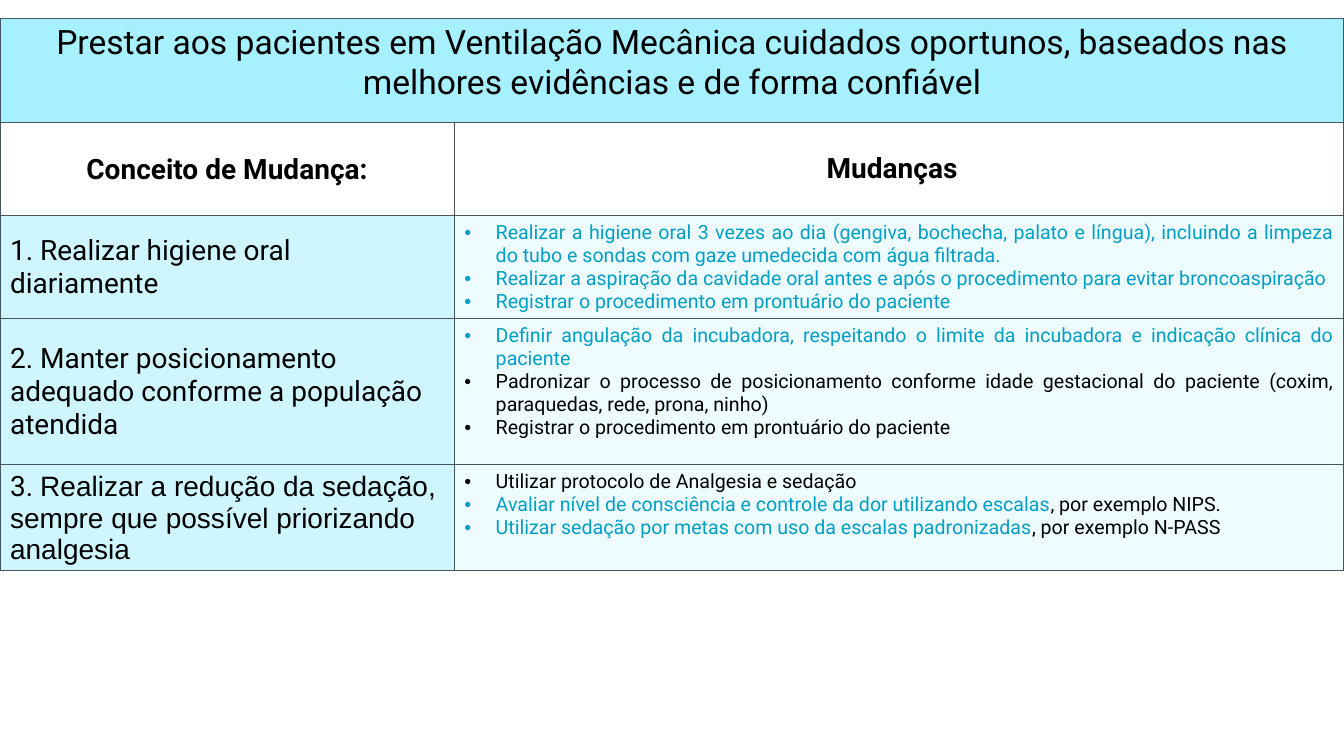
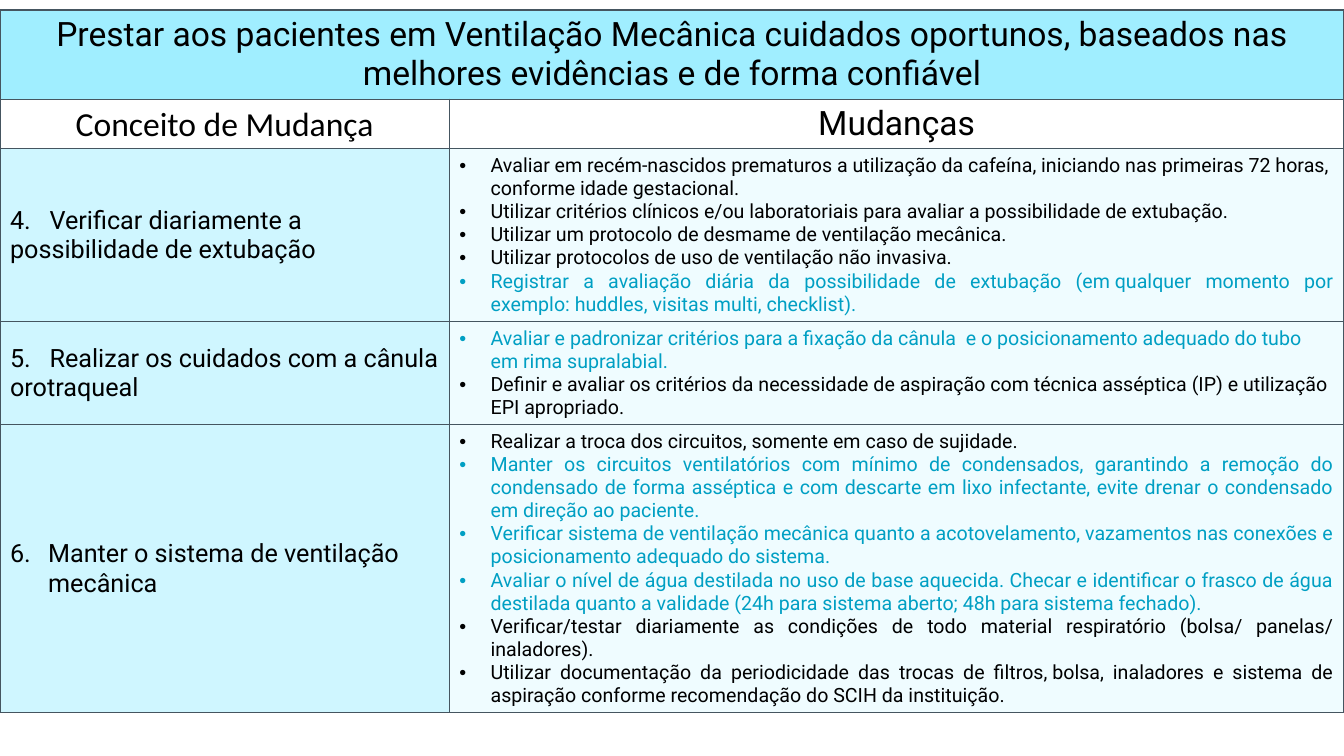
from lxml.etree import SubElement
from pptx import Presentation
from pptx.dml.color import RGBColor
from pptx.enum.text import MSO_ANCHOR as Anchor, PP_ALIGN as Align
from pptx.oxml.ns import qn
from pptx.util import Cm, Pt

# Shared colours, fonts and measures
BLACK = RGBColor(0x00, 0x00, 0x00)
WHITE = RGBColor(0xFF, 0xFF, 0xFF)
BLUE = RGBColor(0x00, 0x9F, 0xC3)
BORDER = RGBColor(0x45, 0x55, 0x60)
CONCEPT_FILL = RGBColor(0xCF, 0xF6, 0xFF)
CHANGES_FILL = RGBColor(0xEF, 0xFC, 0xFF)
FONT = "Roboto"
SLIDE_WIDTH, SLIDE_HEIGHT = Cm(33.87), Cm(19.05)
BULLET_INDENT, NUMBER_INDENT = Cm(0.79), Cm(0.96)
NARROW_MARGINS = {"margin_left": Cm(0.03), "margin_right": Cm(0.03),
                  "margin_top": Cm(0.03), "margin_bottom": 0}

TITLE = ("Prestar aos pacientes em Ventilação Mecânica cuidados oportunos, "
         "baseados nas melhores evidências e de forma confiável")


def unbroken(text):
    """Keep the words of the text on one line."""
    return text.replace(" ", chr(160))


def bullet(*runs, align=Align.JUSTIFY):
    return {"runs": runs, "align": align}


def black(text, **options):
    return bullet((text, BLACK), **options)


def blue(text, **options):
    return bullet((text, BLUE), **options)


# Contents: each row is a concept (text, font), its first number and its changes
SLIDES = [
    {
        "top": Cm(0.47), "concept_width": Cm(11.45),
        "heights": [2.61, 2.36, 2.57, 3.68, 2.67],
        "title_fill": RGBColor(0xA7, 0xF0, 0xFF),
        "headers": [("Conceito de Mudança:", FONT), ("Mudanças  ", FONT)],
        "header_font": {"size": Pt(20), "bold": True},
        "concept_size": Pt(20),
        "rows": [
            ([("1. Realizar higiene oral diariamente", FONT)], None, [
                blue("Realizar a higiene oral 3 vezes ao dia (gengiva, bochecha, palato e "
                     "língua), incluindo a limpeza do tubo e sondas com gaze umedecida com "
                     "água filtrada."),
                blue("Realizar a aspiração da cavidade oral antes e após o procedimento "
                     "para evitar broncoaspiração"),
                blue("Registrar o procedimento em prontuário do paciente"),
            ]),
            ([("2. Manter posicionamento adequado conforme a população atendida", FONT)], None, [
                blue("Definir angulação da incubadora, respeitando o limite da incubadora "
                     "e indicação clínica do paciente"),
                black("Padronizar o processo de posicionamento conforme idade gestacional "
                      "do paciente (coxim, paraquedas, rede, prona, ninho)"),
                black("Registrar o procedimento em prontuário do paciente"),
            ]),
            ([("3. ", FONT), ("Realizar a redução da sedação, sempre que possível "
                              "priorizando analgesia", "Arial")], None, [
                black("Utilizar protocolo de Analgesia e sedação"),
                bullet(("Avaliar nível de consciência e controle da dor utilizando escalas",
                        BLUE), (", por exemplo NIPS.", BLACK)),
                bullet(("Utilizar sedação por metas com uso da escalas padronizadas", BLUE),
                       (", por exemplo N-PASS", BLACK)),
            ]),
        ],
    },
    {
        "top": Cm(0.25), "concept_width": Cm(11.32),
        "heights": [2.25, 1.23, 4.36, 2.59, 7.26],
        "title_fill": RGBColor(0xA0, 0xEE, 0xFF),
        "headers": [("Conceito de Mudança", "Calibri"), ("Mudanças", FONT)],
        "header_font": {"size": Pt(24), "bold": False},
        "concept_size": Pt(18),
        "rows": [
            ([("4.   Verificar diariamente a possibilidade de extubação", FONT)], None, [
                black("Avaliar em recém-nascidos prematuros a utilização da cafeína, "
                      "iniciando nas primeiras 72 horas, conforme idade gestacional.",
                      align=Align.LEFT),
                black("Utilizar critérios clínicos e/ou laboratoriais para avaliar a "
                      "possibilidade de extubação.", align=Align.LEFT),
                black("Utilizar um protocolo de desmame de ventilação mecânica.",
                      align=Align.LEFT),
                black("Utilizar protocolos de uso de ventilação não invasiva.",
                      align=Align.LEFT),
                blue("Registrar a avaliação diária da possibilidade de extubação "
                     + unbroken("(em qualquer") + " momento por "
                     + unbroken("exemplo: huddles, visitas multi, checklist).")),
            ]),
            ([("5.   Realizar os cuidados com a cânula orotraqueal", FONT)], None, [
                blue("Avaliar e padronizar critérios para a fixação da cânula  e o "
                     "posicionamento adequado do tubo em rima supralabial.", align=Align.LEFT),
                black("Definir e avaliar os critérios da necessidade de aspiração com técnica "
                      "asséptica (IP) e utilização EPI apropriado.", align=Align.LEFT),
            ]),
            ([("Manter o sistema de ventilação mecânica", FONT)], 6, [
                black("Realizar a troca dos circuitos, somente em caso de sujidade."),
                blue("Manter os circuitos ventilatórios com mínimo de condensados, garantindo "
                     "a remoção do condensado de forma asséptica e com descarte em lixo "
                     "infectante, evite drenar o condensado em direção ao paciente."),
                blue("Verificar sistema de ventilação mecânica quanto a acotovelamento, "
                     "vazamentos nas conexões e posicionamento adequado do sistema."),
                blue("Avaliar o nível de água destilada no uso de base aquecida. Checar e "
                     "identificar o frasco de água destilada quanto a validade (24h para "
                     "sistema aberto; 48h para sistema fechado)."),
                black("Verificar/testar diariamente as condições de todo material "
                      "respiratório (bolsa/ panelas/ inaladores)."),
                black("Utilizar documentação da periodicidade das trocas de "
                      + unbroken("filtros, bolsa,") + " inaladores e sistema de "
                      "aspiração conforme recomendação do SCIH da instituição."),
            ]),
        ],
    },
]


def set_attributes(target, values):
    for name, value in values.items():
        setattr(target, name, value)


def add_run(paragraph, text, color=BLACK, **font_values):
    run = paragraph.add_run()
    run.text = text
    set_attributes(run.font, {"name": FONT, **font_values})
    run.font.color.rgb = color


def add_marker(paragraph, indent, tag, **attributes):
    """Give the paragraph a hanging bullet or number."""
    properties = paragraph._p.get_or_add_pPr()
    properties.set("marL", str(indent))
    properties.set("indent", str(-indent))
    SubElement(properties, qn("a:buFont"), typeface="Arial" if tag == "a:buChar" else FONT)
    SubElement(properties, qn(tag), **attributes)


def style_cell(cell, color, **values):
    """Fill and outline a cell, and set its layout."""
    set_attributes(cell, values)
    properties = cell._tc.get_or_add_tcPr()
    for side in ("a:lnL", "a:lnR", "a:lnT", "a:lnB"):
        line = SubElement(properties, qn(side), w=str(Pt(1)))
        line_fill = SubElement(line, qn("a:solidFill"))
        SubElement(line_fill, qn("a:srgbClr"), val=str(BORDER))
    cell.fill.solid()
    cell.fill.fore_color.rgb = color


def fill_heading(cell, text, **font_values):
    paragraph = cell.text_frame.paragraphs[0]
    paragraph.alignment = Align.CENTER
    add_run(paragraph, text, **font_values)


def fill_concept(cell, runs, number, size):
    style_cell(cell, CONCEPT_FILL, vertical_anchor=Anchor.MIDDLE)
    paragraph = cell.text_frame.paragraphs[0]
    if number:
        add_marker(paragraph, NUMBER_INDENT, "a:buAutoNum",
                   type="arabicPeriod", startAt=str(number))
    for text, font in runs:
        add_run(paragraph, text, name=font, size=size, bold=False)


def fill_changes(cell, changes):
    style_cell(cell, CHANGES_FILL, vertical_anchor=Anchor.TOP)
    frame = cell.text_frame
    for index, change in enumerate(changes):
        paragraph = frame.add_paragraph() if index else frame.paragraphs[0]
        paragraph.alignment = change["align"]
        add_marker(paragraph, BULLET_INDENT, "a:buChar", char="•")
        for text, color in change["runs"]:
            add_run(paragraph, text, color, size=Pt(14), bold=False)


def add_change_table(slide, left, top, width, content):
    heights = [Cm(height) for height in content["heights"]]
    table = slide.shapes.add_table(len(heights), 2, left, top, width, sum(heights)).table
    set_attributes(table, {"first_row": False, "horz_banding": False})
    table.columns[0].width = content["concept_width"]
    table.columns[1].width = width - content["concept_width"]
    for row, height in zip(table.rows, heights):
        row.height = height

    # Title band across both columns
    title = table.cell(0, 0)
    title.merge(table.cell(0, 1))
    for column in range(2):
        style_cell(table.cell(0, column), content["title_fill"])
    fill_heading(title, TITLE, size=Pt(24), bold=False)

    # Column headings
    for column, (text, font) in enumerate(content["headers"]):
        cell = table.cell(1, column)
        margins = {} if column else NARROW_MARGINS
        style_cell(cell, WHITE, vertical_anchor=Anchor.MIDDLE, **margins)
        fill_heading(cell, text, name=font, **content["header_font"])

    # Concepts and their changes
    for row, (concept, number, changes) in enumerate(content["rows"], start=2):
        fill_concept(table.cell(row, 0), concept, number, content["concept_size"])
        fill_changes(table.cell(row, 1), changes)


def main():
    presentation = Presentation()
    set_attributes(presentation, {"slide_width": SLIDE_WIDTH, "slide_height": SLIDE_HEIGHT})
    for content in SLIDES:
        slide = presentation.slides.add_slide(presentation.slide_layouts[6])
        add_change_table(slide, 0, content["top"], SLIDE_WIDTH, content)
    presentation.save("out.pptx")


if __name__ == "__main__":
    main()
